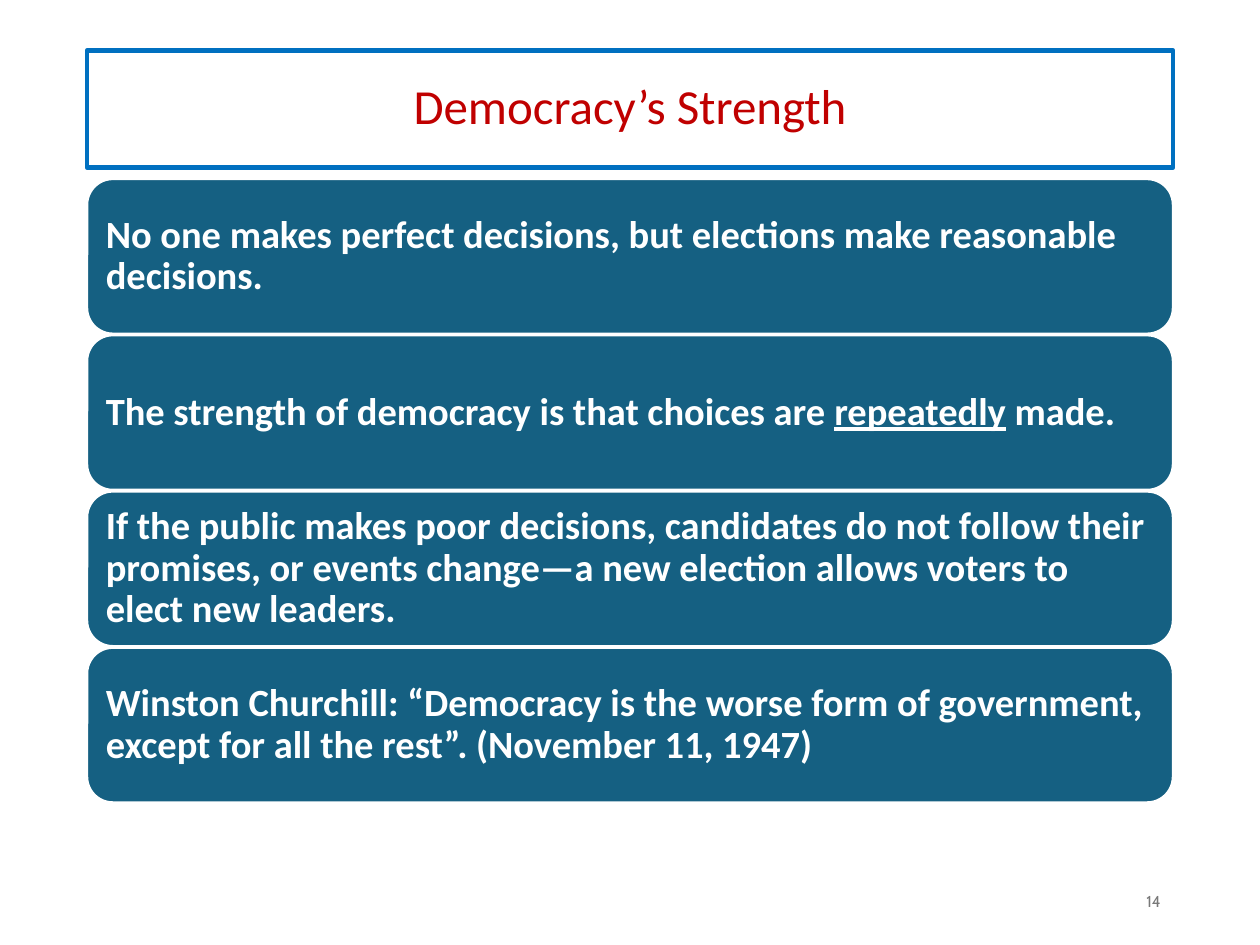
import pptx
import pptx.dml.color
import pptx.enum.shapes
import pptx.enum.text
import pptx.util

Inches = pptx.util.Inches
Pt = pptx.util.Pt
SHAPE = pptx.enum.shapes.MSO_SHAPE
ALIGN = pptx.enum.text.PP_ALIGN


def color(value):
    return pptx.dml.color.RGBColor.from_string(value)


class SlideBuilder:
    """Holds the style and the current slide, and adds each kind of element."""

    LEFT, WIDTH = 0.69, 8.62
    FONT = "Calibri"

    def __init__(self, slide):
        self.slide = slide

    def add_text(self, sp, pieces, size, hue, align, font=FONT, bold=False, spacing=0.9):
        tf = sp.text_frame
        tf.word_wrap = True
        tf.vertical_anchor = pptx.enum.text.MSO_ANCHOR.MIDDLE
        p = tf.paragraphs[0]
        p.alignment = align
        p.line_spacing = spacing
        for text, underline in pieces:
            r = p.add_run()
            r.text = text
            r.font.name = font
            r.font.size = Pt(size)
            r.font.bold = bold
            r.font.underline = underline
            r.font.color.rgb = color(hue)

    def box(self, kind, top, height, fill, line, line_width):
        sp = self.slide.shapes.add_shape(
            kind, Inches(self.LEFT), Inches(top), Inches(self.WIDTH), Inches(height))
        sp.shadow.inherit = False
        sp.fill.solid()
        sp.fill.fore_color.rgb = color(fill)
        sp.line.color.rgb = color(line)
        sp.line.width = Pt(line_width)
        return sp

    def title(self, text):
        sp = self.box(SHAPE.RECTANGLE, 0.4, 0.93, "FFFFFF", "0070C0", 2.5)
        self.add_text(sp, [(text, False)], 28, "C00000", ALIGN.CENTER)

    def card(self, top, pieces):
        sp = self.box(SHAPE.ROUNDED_RECTANGLE, top, 1.23, "156082", "FFFFFF", 1.5)
        tf = sp.text_frame
        tf.margin_left = tf.margin_right = Inches(0.09)
        tf.margin_top = tf.margin_bottom = Inches(0.09)
        self.add_text(sp, pieces, 22, "FFFFFF", ALIGN.LEFT, bold=True)

    def page_number(self, text):
        sp = self.slide.shapes.add_textbox(
            Inches(7.06), Inches(6.95), Inches(2.25), Inches(0.4))
        self.add_text(sp, [(text, False)], 9, "797979", ALIGN.RIGHT, font="Cabin", spacing=1.0)


CARDS = [
    [("No one makes perfect decisions, but elections make reasonable decisions.", False)],
    [("The strength of democracy is that choices are ", False),
     ("repeatedly", True), (" made.", False)],
    [("If the public makes poor decisions, candidates do not follow their promises, "
      "or events change—a new election allows voters to elect new leaders.", False)],
    [("Winston Churchill: “Democracy is the worse form of government, "
      "except for all the rest”. (November 11, 1947)", False)],
]


def main():
    prs = pptx.Presentation()
    prs.slide_width = Inches(10)
    prs.slide_height = Inches(7.5)
    builder = SlideBuilder(prs.slides.add_slide(prs.slide_layouts[6]))
    builder.title("Democracy’s Strength")
    for i, pieces in enumerate(CARDS):
        builder.card(1.42 + 1.24 * i, pieces)
    builder.page_number("14")
    prs.save("out.pptx")


if __name__ == "__main__":
    main()
